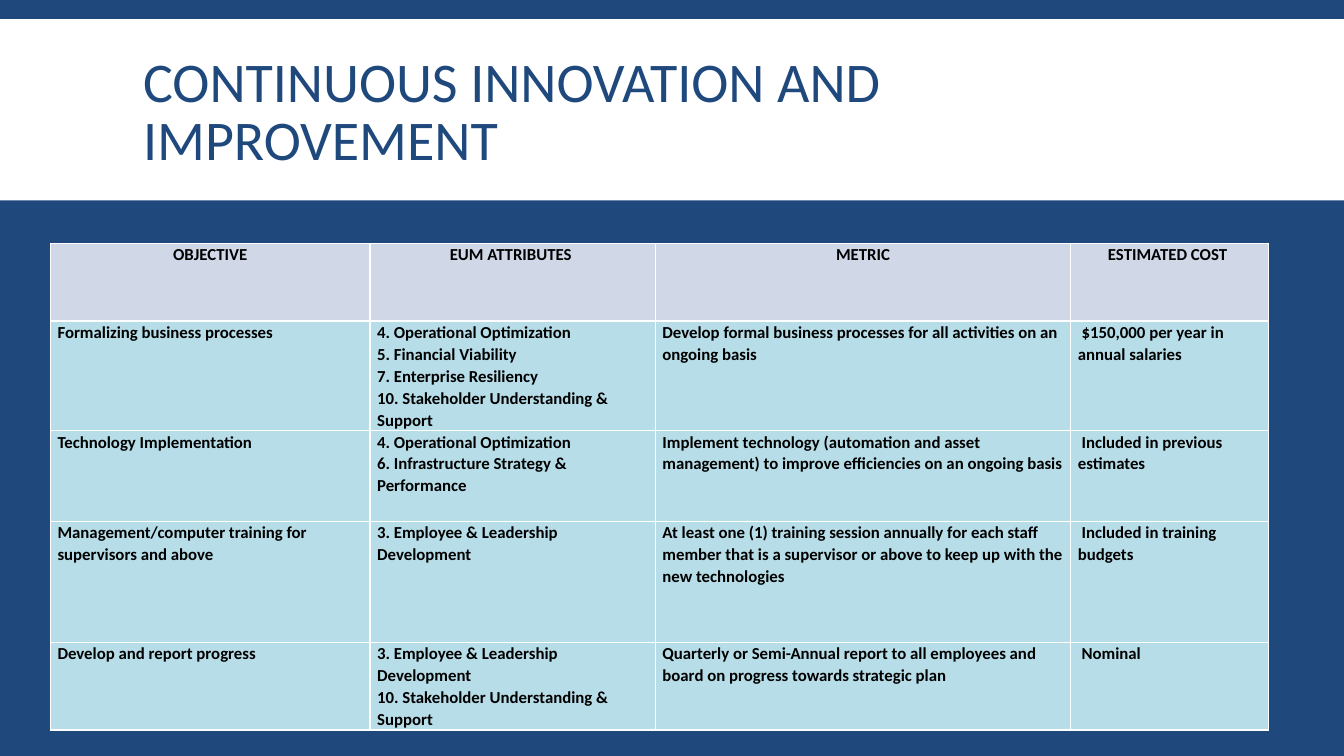
import pptx
import pptx.dml.color
import pptx.enum.shapes
import pptx.enum.text
import pptx.oxml
import pptx.oxml.ns
import pptx.util

COLORS = {
    "navy": "1F497D",
    "white": "FFFFFF",
    "black": "000000",
    "header": "D0D8E8",
    "body": "B7DEE8",
}
ALIGN = pptx.enum.text.PP_ALIGN
ANCHOR = pptx.enum.text.MSO_ANCHOR

COLUMN_SHARES = [23.78, 21.23, 30.91, 14.7]
ROW_SHARES = [10.27, 10.27, 12, 16, 10.27]
OBJECTIVES = [
    ["OBJECTIVE", "EUM ATTRIBUTES ", "METRIC", "ESTIMATED COST "],
    [
        "Formalizing business processes",
        "4. Operational Optimization\n5. Financial Viability\n"
        "7. Enterprise Resiliency\n10. Stakeholder Understanding & Support",
        "Develop formal business processes for all activities on an ongoing basis",
        " $150,000 per year in annual salaries",
    ],
    [
        "Technology Implementation",
        "4. Operational Optimization\n6. Infrastructure Strategy & Performance",
        "Implement technology (automation and asset management) "
        "to improve efficiencies on an ongoing basis",
        " Included in previous estimates",
    ],
    [
        "Management/computer training for supervisors and above",
        "3. Employee & Leadership Development",
        "At least one (1) training session annually for each staff member that is "
        "a supervisor or above to keep up with the new technologies",
        " Included in training budgets",
    ],
    [
        "Develop and report progress",
        "3. Employee & Leadership Development\n"
        "10. Stakeholder Understanding & Support ",
        "Quarterly or Semi-Annual report to all employees and board "
        "on progress towards strategic plan",
        " Nominal",
    ],
]


def rgb(name):
    return pptx.dml.color.RGBColor.from_string(COLORS[name])


def paint(fill, color):
    fill.solid()
    fill.fore_color.rgb = rgb(color)


def write(frame, text, size=12, color="black", bold=False, align=ALIGN.LEFT, spacing=1.07):
    frame.word_wrap = True
    for index, line in enumerate(text.split("\n")):
        para = frame.add_paragraph() if index else frame.paragraphs[0]
        para.alignment = align
        para.line_spacing = spacing
        span = para.add_run()
        span.text = line
        span.font.name = "Calibri"
        span.font.size = pptx.util.Pt(size)
        span.font.bold = bold
        span.font.color.rgb = rgb(color)


class StrategySlide:
    def __init__(self, deck, background):
        self.deck = deck
        self.page = deck.slides.add_slide(deck.slide_layouts[5])
        paint(self.page.background.fill, background)

    def across(self, share):
        return round(self.deck.slide_width * share / 100)

    def down(self, share):
        return round(self.deck.slide_height * share / 100)

    def area(self, left, top, width, height):
        return self.across(left), self.down(top), self.across(width), self.down(height)

    def band(self, top, height, color):
        box = self.page.shapes.add_shape(
            pptx.enum.shapes.MSO_SHAPE.RECTANGLE, *self.area(0, top, 100, height)
        )
        box.shadow.inherit = False
        paint(box.fill, color)
        box.line.fill.background()
        self.page.shapes.title._element.addprevious(box._element)

    def title(self, text, left, top, width, height):
        box = self.page.shapes.title
        box.left, box.top, box.width, box.height = self.area(left, top, width, height)
        frame = box.text_frame
        frame.auto_size = pptx.enum.text.MSO_AUTO_SIZE.NONE
        frame.vertical_anchor = ANCHOR.MIDDLE
        write(frame, text, size=40, color="navy", spacing=0.85)

    def borders(self, cell, color):
        properties = cell._tc.get_or_add_tcPr()
        for side in ("lnL", "lnR", "lnT", "lnB"):
            properties.append(pptx.oxml.parse_xml(
                f'<a:{side} {pptx.oxml.ns.nsdecls("a")} w="{pptx.util.Pt(1)}">'
                f'<a:solidFill><a:srgbClr val="{COLORS[color]}"/></a:solidFill></a:{side}>'
            ))

    def table(self, rows, left, top, column_shares, row_shares):
        grid = self.page.shapes.add_table(
            len(rows), len(column_shares),
            *self.area(left, top, sum(column_shares), sum(row_shares)),
        ).table
        grid.first_row = grid.horz_banding = False
        for column, share in zip(grid.columns, column_shares):
            column.width = self.across(share)
        for row, share in zip(grid.rows, row_shares):
            row.height = self.down(share)
        for row_index, texts in enumerate(rows):
            for column_index, text in enumerate(texts):
                cell = grid.cell(row_index, column_index)
                cell.margin_left = cell.margin_right = self.across(0.53)
                cell.margin_top = cell.margin_bottom = 0
                cell.vertical_anchor = ANCHOR.TOP
                self.borders(cell, "white")
                paint(cell.fill, "body" if row_index else "header")
                align = ALIGN.LEFT if row_index else ALIGN.CENTER
                write(cell.text_frame, text, bold=True, align=align)


def main():
    deck = pptx.Presentation()
    deck.slide_width = pptx.util.Inches(13.33)
    deck.slide_height = pptx.util.Inches(7.5)
    slide = StrategySlide(deck, "navy")
    slide.band(2.53, 24, "white")
    slide.title("CONTINUOUS INNOVATION AND IMPROVEMENT", 9.9, 4.13, 80.27, 22)
    slide.table(OBJECTIVES, 3.75, 32.2, COLUMN_SHARES, ROW_SHARES)
    deck.save("out.pptx")


if __name__ == "__main__":
    main()
